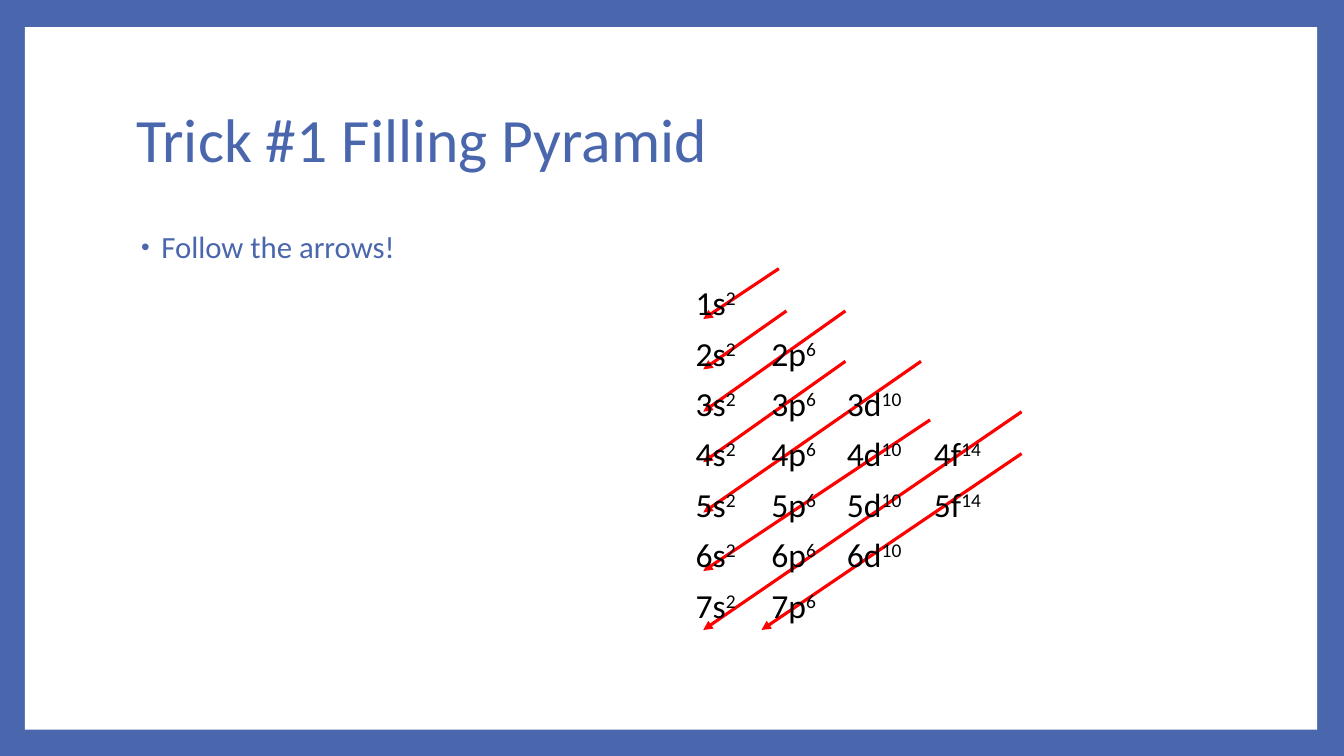
"""Build the slide on the orbital filling pyramid."""
from dataclasses import dataclass

from lxml.etree import SubElement as Sub
from pptx import Presentation
from pptx.dml.color import RGBColor as Rgb
from pptx.enum.shapes import MSO_CONNECTOR as Conn, MSO_SHAPE as Kind
from pptx.enum.text import MSO_ANCHOR as Anchor, MSO_AUTO_SIZE as Auto, PP_ALIGN as Align
from pptx.oxml.ns import qn
from pptx.util import Inches, Pt

HUES = {"blue": "4A66AC", "white": "FFFFFF", "red": "FF0000", "black": "000000"}
COL, ROW = 0.75, 0.5
LEFT, TOP = 9.07, 5.5


@dataclass(frozen=True)
class Box:
    """Place on the slide in columns and rows."""
    col: float
    row: float
    wide: float
    high: float

    def place(self) -> tuple:
        """Return left, top, width and height."""
        return (Inches(self.col * COL), Inches(self.row * ROW),
                Inches(self.wide * COL), Inches(self.high * ROW))


@dataclass(frozen=True)
class Shell:
    """Column of orbitals that share a letter."""
    sign: str
    count: str
    col: float
    wide: float
    first: int
    last: int


@dataclass(frozen=True)
class Arrow:
    """Arrow in columns and rows of the pyramid."""
    col: float
    row: float
    end_col: float
    end_row: float


FRAME = Box(0.33, 0.54, 17.09, 13.94)
TITLE = Box(1.67, 1.34, 14.4, 2.96)
BODY = Box(1.67, 4.5, 14.4, 8.84)
SHELLS = (
    Shell("s", "2", 0, 0.91, 1, 7),
    Shell("p", "6", 1, 0.93, 2, 7),
    Shell("d", "10", 2, 1.09, 3, 6),
    Shell("f", "14", 3.15, 0.97, 4, 5),
)
ARROWS = (
    Arrow(4.44, 2.67, 0.23, 7),
    Arrow(4.44, 3.5, 1, 7),
    Arrow(3.23, 2.83, 0.23, 5.83),
    Arrow(3.11, 1.67, 0.23, 4.67),
    Arrow(2.11, 1.67, 0.23, 3.67),
    Arrow(2.11, 0.67, 0.23, 2.67),
    Arrow(1.33, 0.67, 0.23, 1.83),
    Arrow(1.23, -0.17, 0.23, 0.83),
)


def apply(item, looks: dict) -> None:
    """Set each attribute named in looks."""
    for key, value in looks.items():
        setattr(item, key, value)


def write(para, text: str, size: int, hue: str):
    """Add a run of text and return its font."""
    run = para.add_run()
    run.text = text
    apply(run.font, {"name": "Calibri", "size": Pt(size)})
    run.font.color.rgb = Rgb.from_string(HUES[hue])
    return run.font


def draw_frame(slide) -> None:
    """Paint the backdrop and the white panel."""
    fill = slide.background.fill
    fill.solid()
    fill.fore_color.rgb = Rgb.from_string(HUES["blue"])
    panel = slide.shapes.add_shape(Kind.RECTANGLE, *FRAME.place())
    panel.shadow.inherit = False
    panel.fill.solid()
    panel.fill.fore_color.rgb = Rgb.from_string(HUES["white"])
    panel.line.fill.background()
    slide.shapes._spTree.insert(2, panel._element)


def draw_title(slide) -> None:
    """Fill and move the title."""
    title = slide.shapes.title
    apply(title, dict(zip(("left", "top", "width", "height"), TITLE.place())))
    apply(title.text_frame, {"vertical_anchor": Anchor.MIDDLE,
                             "auto_size": Auto.NONE, "word_wrap": True})
    para = title.text_frame.paragraphs[0]
    apply(para, {"alignment": Align.LEFT, "line_spacing": 0.9})
    write(para, "Trick #1 Filling Pyramid", 44, "blue")


def draw_body(slide) -> None:
    """Add the bullet line."""
    frame = slide.shapes.add_textbox(*BODY.place()).text_frame
    frame.word_wrap = True
    para = frame.paragraphs[0]
    apply(para, {"line_spacing": 0.9, "space_before": Pt(14)})
    props = para._p.get_or_add_pPr()
    props.set("marL", str(Inches(0.25)))
    props.set("indent", str(Inches(-0.2)))
    Sub(Sub(props, qn("a:buClr")), qn("a:srgbClr"), val=HUES["blue"])
    Sub(props, qn("a:buSzPct"), val="80000")
    Sub(props, qn("a:buFont"), typeface="Arial")
    Sub(props, qn("a:buChar"), char="•")
    write(para, "Follow the arrows!", 22, "blue")


def draw_arrow(group, arrow: Arrow) -> None:
    """Add one red arrow."""
    line = group.shapes.add_connector(
        Conn.STRAIGHT,
        Inches((LEFT + arrow.col) * COL), Inches((TOP + arrow.row) * ROW),
        Inches((LEFT + arrow.end_col) * COL), Inches((TOP + arrow.end_row) * ROW))
    line.line.width = Pt(2.25)
    line.line.color.rgb = Rgb.from_string(HUES["red"])
    Sub(line.line._get_or_add_ln(), qn("a:tailEnd"), type="triangle")
    Sub(line._element.spPr, qn("a:effectLst"))


def draw_shell(group, shell: Shell) -> None:
    """Add the labels of one column."""
    for level in range(shell.first, shell.last + 1):
        box = Box(LEFT + shell.col, TOP + level - 1, shell.wide, 1)
        frame = group.shapes.add_textbox(*box.place()).text_frame
        apply(frame, {"word_wrap": False, "auto_size": Auto.SHAPE_TO_FIT_TEXT})
        para = frame.paragraphs[0]
        write(para, f"{level}{shell.sign}", 24, "black")
        write(para, shell.count, 24, "black")._element.set("baseline", "30000")


def main() -> None:
    """Build and save the slide."""
    deck = Presentation()
    apply(deck, {"slide_width": Inches(13.33), "slide_height": Inches(7.5)})
    slide = deck.slides.add_slide(deck.slide_layouts[5])
    draw_frame(slide)
    draw_title(slide)
    draw_body(slide)
    group = slide.shapes.add_group_shape()
    for arrow in ARROWS:
        draw_arrow(group, arrow)
    for shell in SHELLS:
        draw_shell(group, shell)
    deck.save("out.pptx")


if __name__ == "__main__":
    main()
